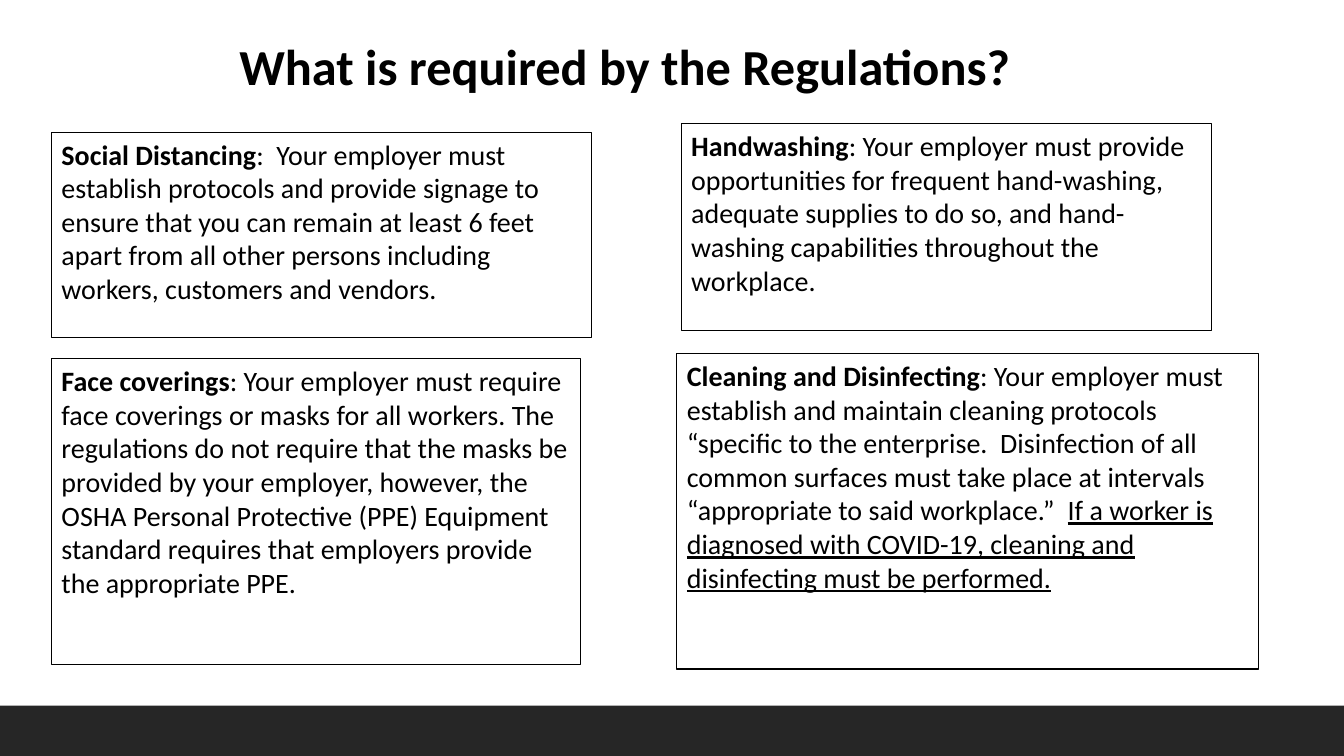
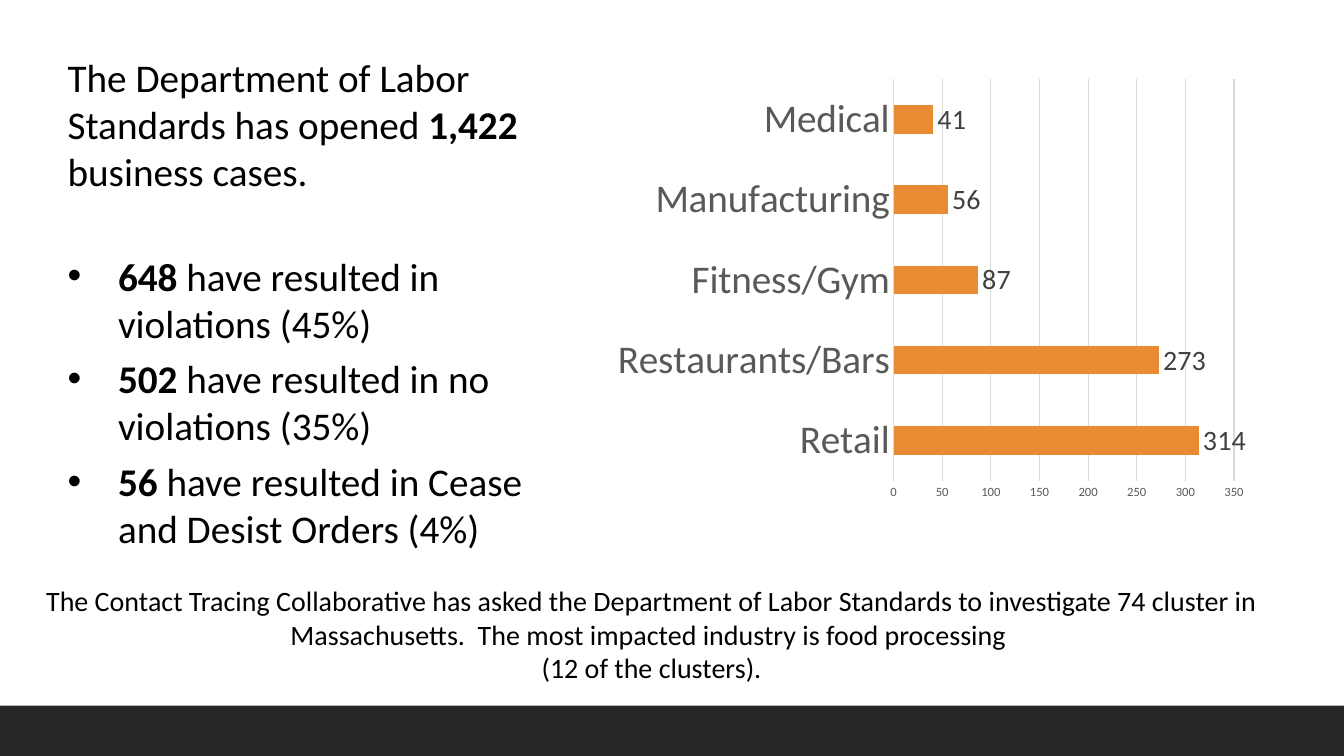
from dataclasses import dataclass

from lxml.etree import SubElement
from pptx import Presentation
from pptx.chart.data import CategoryChartData
from pptx.dml.color import RGBColor
from pptx.enum.chart import XL_CHART_TYPE as ChartType
from pptx.enum.chart import XL_LABEL_POSITION as LabelPosition
from pptx.enum.chart import XL_TICK_MARK as TickMark
from pptx.enum.shapes import MSO_SHAPE as Preset
from pptx.enum.text import MSO_ANCHOR as Anchor
from pptx.enum.text import MSO_AUTO_SIZE as AutoSize
from pptx.enum.text import PP_ALIGN as Align
from pptx.oxml.ns import qn
from pptx.presentation import Presentation as Deck
from pptx.shapes.base import BaseShape
from pptx.slide import Slide
from pptx.text.text import Font, TextFrame
from pptx.util import Cm, Pt

# Shared style
FONT = "Calibri"
BLACK = RGBColor(0x00, 0x00, 0x00)
BAND_GREY = RGBColor(0x26, 0x26, 0x26)
LABEL_GREY = RGBColor(0x40, 0x40, 0x40)
AXIS_GREY = RGBColor(0x59, 0x59, 0x59)
GRID_GREY = RGBColor(0xD9, 0xD9, 0xD9)
ORANGE = RGBColor(0xE8, 0x8B, 0x33)
SLIDE_WIDTH, SLIDE_HEIGHT, BAND_HEIGHT = 33.87, 19.05, 1.27
TITLE_SIZE, LEAD_SIZE, TEXT_SIZE = 36, 28, 20
THIN_LINE = Pt(0.75)


@dataclass(frozen=True)
class Area:
    """Position and size in centimetres."""
    left: float
    top: float
    width: float
    height: float

    def lengths(self) -> tuple[Cm, Cm, Cm, Cm]:
        return Cm(self.left), Cm(self.top), Cm(self.width), Cm(self.height)


@dataclass(frozen=True)
class Span:
    text: str
    bold: bool = False
    underline: bool = False


@dataclass(frozen=True)
class Requirement:
    area: Area
    name: str
    detail: str
    emphasis: str = ""


REQUIREMENTS = [
    Requirement(
        Area(1.3, 3.33, 13.61, 5.18), "Social Distancing",
        ":  Your employer must establish protocols and provide signage to ensure that you can "
        "remain at least 6 feet apart from all other persons including workers, customers and "
        "vendors."),
    Requirement(
        Area(1.3, 9.04, 13.34, 7.7), "Face coverings",
        ": Your employer must require face coverings or masks for all workers. The regulations "
        "do not require that the masks be provided by your employer, however, the OSHA Personal "
        "Protective (PPE) Equipment standard requires that employers provide the appropriate "
        "PPE."),
    Requirement(
        Area(17.17, 3.12, 13.36, 5.2), "Handwashing",
        ": Your employer must provide opportunities for frequent hand-washing, adequate supplies "
        "to do so, and hand-washing capabilities throughout the workplace."),
    Requirement(
        Area(17.06, 8.91, 14.66, 7.95), "Cleaning and Disinfecting",
        ": Your employer must establish and maintain cleaning protocols “specific to the "
        "enterprise.  Disinfection of all common surfaces must take place at intervals "
        "“appropriate to said workplace.”  ",
        "If a worker is diagnosed with COVID-19, cleaning and disinfecting must be performed."),
]

CASE_RESULTS = [
    [Span("648 ", bold=True), Span("have resulted in violations (45%)")],
    [Span("502", bold=True), Span(" have resulted in no violations (35%)")],
    [Span("56 ", bold=True), Span("have resulted in Cease and Desist Orders (4%)")],
]

CASES_BY_INDUSTRY = {
    "Retail": 314, "Restaurants/Bars": 273, "Fitness/Gym": 87, "Manufacturing": 56, "Medical": 41,
}


def style_font(font: Font, size: float, color: RGBColor = BLACK) -> None:
    font.name = FONT
    font.size = Pt(size)
    font.color.rgb = color


def place(shape: BaseShape, area: Area) -> None:
    shape.left, shape.top, shape.width, shape.height = area.lengths()


def write(frame: TextFrame, lines: list[list[Span]], size: float,
          align: Align = Align.LEFT, bulleted: bool = False) -> None:
    """Fill a frame with one paragraph for each line of spans."""
    frame.word_wrap = True
    frame.auto_size = AutoSize.NONE
    frame.vertical_anchor = Anchor.TOP
    for index, line in enumerate(lines):
        para = frame.add_paragraph() if index else frame.paragraphs[0]
        para.alignment = align
        if bulleted:
            para.space_before = Pt(6 if index else 0)
            properties = para._p.get_or_add_pPr()
            properties.set("marL", str(Cm(1.27)))
            properties.set("indent", str(-Cm(1.27)))
            SubElement(properties, qn("a:buChar"), char="•")
        for span in line:
            run = para.add_run()
            run.text = span.text
            style_font(run.font, size)
            run.font.bold = span.bold
            run.font.underline = span.underline


def add_title(slide: Slide, area: Area, spans: list[Span], size: float, align: Align) -> None:
    place(slide.shapes.title, area)
    write(slide.shapes.title.text_frame, [spans], size, align)


def add_master_band(deck: Deck, slide: Slide) -> None:
    """Draw the bottom band and move it to the master, behind everything."""
    area = Area(0, SLIDE_HEIGHT - BAND_HEIGHT, SLIDE_WIDTH, BAND_HEIGHT)
    band = slide.shapes.add_shape(Preset.RECTANGLE, *area.lengths())
    band.shadow.inherit = False
    band.fill.solid()
    band.fill.fore_color.rgb = BAND_GREY
    band.line.fill.background()
    deck.slide_master.shapes.element.insert(2, band.element)


def add_requirement(slide: Slide, requirement: Requirement) -> None:
    box = slide.shapes.add_shape(Preset.RECTANGLE, *requirement.area.lengths())
    box.shadow.inherit = False
    box.fill.background()
    box.line.color.rgb = BLACK
    box.line.width = THIN_LINE
    spans = [Span(requirement.name, bold=True), Span(requirement.detail)]
    if requirement.emphasis:
        spans.append(Span(requirement.emphasis, underline=True))
    write(box.text_frame, [spans], TEXT_SIZE)


def add_industry_chart(slide: Slide, area: Area) -> None:
    data = CategoryChartData()
    data.categories = list(CASES_BY_INDUSTRY)
    data.add_series("Series 1", list(CASES_BY_INDUSTRY.values()))
    chart = slide.shapes.add_chart(ChartType.BAR_CLUSTERED, *area.lengths(), data).chart
    chart.has_title = False
    chart.has_legend = False
    style_font(chart.font, 10)

    # Axes
    for axis, size in ((chart.category_axis, 28), (chart.value_axis, 9)):
        axis.major_tick_mark = axis.minor_tick_mark = TickMark.NONE
        style_font(axis.tick_labels.font, size, AXIS_GREY)
    chart.category_axis.has_major_gridlines = False
    chart.value_axis.has_major_gridlines = True
    chart.value_axis.format.line.fill.background()
    for line in (chart.category_axis.format.line, chart.value_axis.major_gridlines.format.line):
        line.color.rgb = GRID_GREY
        line.width = THIN_LINE

    # Bars and value labels
    plot = chart.plots[0]
    plot.gap_width = 182
    plot.vary_by_categories = False
    fill = plot.series[0].format.fill
    fill.solid()
    fill.fore_color.rgb = ORANGE
    plot.has_data_labels = True
    labels = plot.data_labels
    labels.show_value = True
    labels.position = LabelPosition.OUTSIDE_END
    style_font(labels.font, 20, LABEL_GREY)


def build_requirements_slide(slide: Slide) -> None:
    add_title(slide, Area(3.56, 0.76, 24.38, 1.8),
              [Span("What is required by the Regulations?", bold=True)], TITLE_SIZE, Align.CENTER)
    for requirement in REQUIREMENTS:
        add_requirement(slide, requirement)


def build_cases_slide(slide: Slide) -> None:
    # Case count and its breakdown
    add_title(slide, Area(1.45, 1.22, 13.28, 4),
              [Span("The Department of Labor Standards has opened "), Span("1,422", bold=True),
               Span(" business cases.")], LEAD_SIZE, Align.LEFT)
    results = slide.placeholders[1]
    place(results, Area(1.45, 6.22, 13.28, 7.87))
    write(results.text_frame, CASE_RESULTS, LEAD_SIZE, bulleted=True)

    add_industry_chart(slide, Area(15.24, 1.78, 16.43, 11.02))

    # Cluster note
    note = slide.shapes.add_textbox(*Area(0, 14.58, 32.84, 2.82).lengths())
    write(note.text_frame, [
        [Span("The Contact Tracing Collaborative has asked the Department of Labor Standards to "
              "investigate 74 cluster in Massachusetts.  The most impacted industry is food "
              "processing ")],
        [Span("(12 of the clusters).")],
    ], TEXT_SIZE, Align.CENTER)


def main() -> None:
    deck = Presentation()
    deck.slide_width, deck.slide_height = Cm(SLIDE_WIDTH), Cm(SLIDE_HEIGHT)
    requirements = deck.slides.add_slide(deck.slide_layouts.get_by_name("Title Only"))
    cases = deck.slides.add_slide(deck.slide_layouts.get_by_name("Title and Content"))
    add_master_band(deck, requirements)
    build_requirements_slide(requirements)
    build_cases_slide(cases)
    deck.save("out.pptx")


if __name__ == "__main__":
    main()
